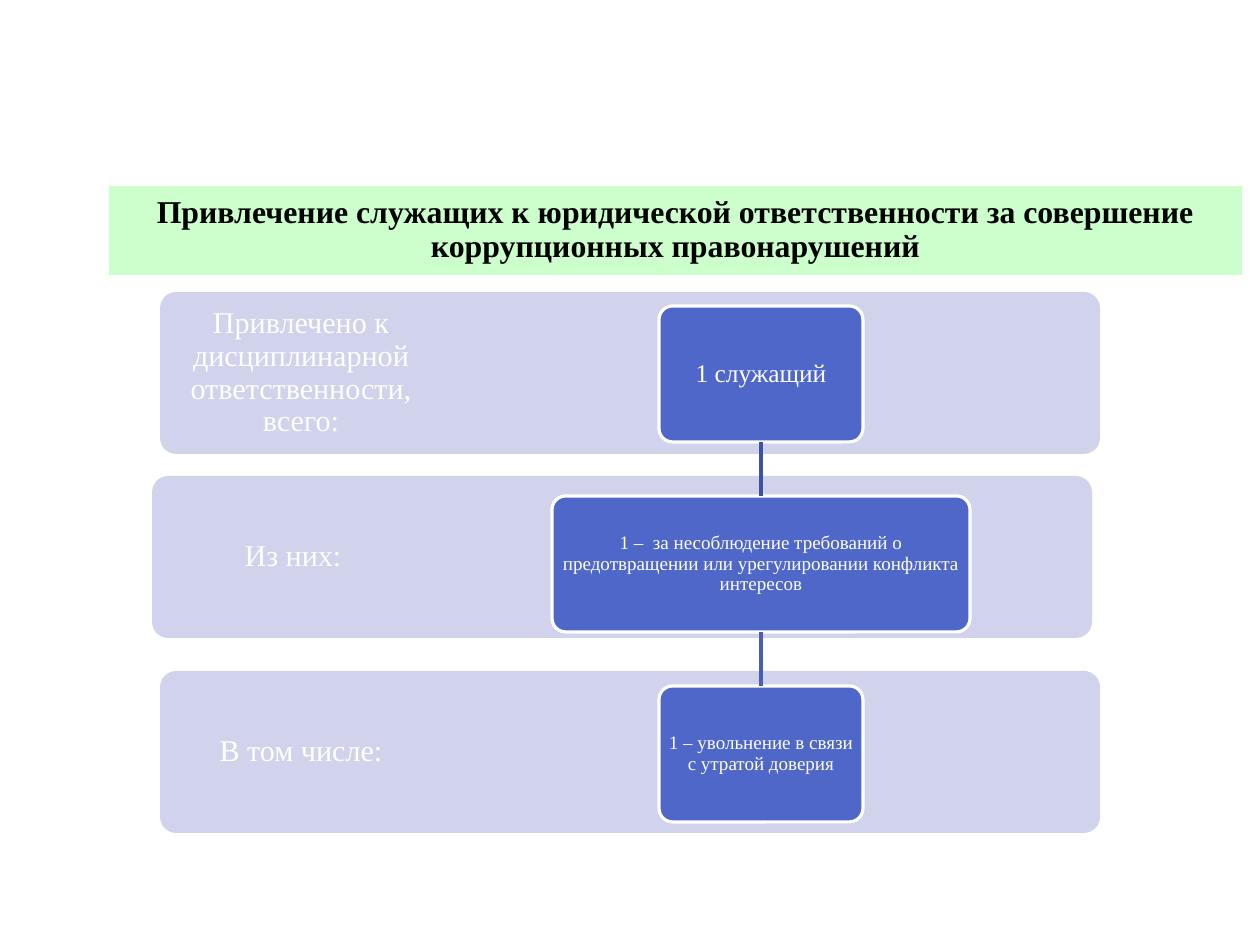
from dataclasses import dataclass

from lxml.etree import SubElement
from pptx import Presentation
from pptx.dml.color import RGBColor as Rgb
from pptx.enum.shapes import MSO_CONNECTOR as Link, MSO_SHAPE as Kind
from pptx.enum.text import MSO_ANCHOR as Anchor, MSO_AUTO_SIZE as Fit, PP_ALIGN as Align
from pptx.oxml.ns import qn
from pptx.shapes.autoshape import Shape
from pptx.slide import Slide
from pptx.util import Emu, Pt

PX = 8000
FONT = "Times New Roman"
WHITE = "FFFFFF"
BAND = "D0D3EB"
BLUE = "4E67C8"
MINT = "CCFFCC"
BLACK = "000000"

BAND_W, BAND_H = 940, 162
LABEL_W, LABEL_PAD = 282, 12
BOX_H, BOX_STEP, BOX_TOP = 136, 190, 306
MID = 761


@dataclass
class Row:
    label: str
    left: int
    top: int
    note: str
    width: int
    size: int
    inset: int


ROWS = [
    Row("Привлечено к дисциплинарной ответственности, всего:", 160, 292,
        "1 служащий", 204, 16, 8),
    Row("Из них:", 152, 476,
        "1 –  за несоблюдение требований о предотвращении или урегулировании "
        "конфликта интересов", 418, 12, 4),
    Row("В том числе:", 160, 671,
        "1 – увольнение в связи с утратой доверия", 204, 12, 4),
]
LINKS = ["3E52A0", "475DB6"]


def px(count: int) -> Emu:
    return Emu(count * PX)


def color(code: str) -> Rgb:
    return Rgb.from_string(code)


def paint(shape: Shape, code: str) -> None:
    shape.fill.solid()
    shape.fill.fore_color.rgb = color(code)


def write(shape: Shape, text: str, size: int, code: str, sides: tuple[int, int, int],
          bold: bool = False) -> None:
    left, right, edge = sides
    frame = shape.text_frame
    frame.auto_size = Fit.NONE
    frame.word_wrap = True
    frame.vertical_anchor = Anchor.MIDDLE
    frame.margin_left, frame.margin_right = px(left), px(right)
    frame.margin_top = frame.margin_bottom = px(edge)
    frame.text = text
    para = frame.paragraphs[0]
    para.alignment = Align.CENTER
    para.line_spacing = 0.9
    para.space_before = Pt(0)
    para.font.name = FONT
    para.font.size = Pt(size)
    para.font.bold = bold
    para.font.color.rgb = color(code)


def panel(slide: Slide, left: int, top: int, width: int, height: int, code: str) -> Shape:
    shape = slide.shapes.add_shape(
        Kind.ROUNDED_RECTANGLE, px(left), px(top), px(width), px(height))
    shape.adjustments[0] = 0.1
    shape.shadow.inherit = False
    paint(shape, code)
    shape.line.fill.background()
    return shape


def band(slide: Slide, row: Row) -> None:
    shape = panel(slide, row.left, row.top, BAND_W, BAND_H, BAND)
    right = BAND_W - LABEL_W + LABEL_PAD
    write(shape, row.label, 19, WHITE, (LABEL_PAD, right, LABEL_PAD))


def box(slide: Slide, row: Row, top: int) -> Shape:
    shape = panel(slide, MID - row.width // 2, top, row.width, BOX_H, BLUE)
    shape.line.color.rgb = color(WHITE)
    shape.line.width = Pt(2)
    write(shape, row.note, row.size, WHITE, (row.inset,) * 3)
    return shape


def join(slide: Slide, upper: Shape, lower: Shape, code: str) -> None:
    link = slide.shapes.add_connector(Link.STRAIGHT, 0, 0, 0, 0)
    link.begin_connect(upper, 2)
    link.end_connect(lower, 0)
    link.line.color.rgb = color(code)
    link.line.width = Pt(2)
    SubElement(link._element.spPr, qn("a:effectLst"))


def head(slide: Slide) -> None:
    title = slide.shapes.title
    title.left, title.top = px(109), px(186)
    title.width, title.height = px(1133), px(89)
    paint(title, MINT)
    write(title, "Привлечение служащих к юридической ответственности за совершение "
          "коррупционных правонарушений", 20, BLACK, (0, 0, 0), True)


def main() -> None:
    deck = Presentation()
    deck.slide_width, deck.slide_height = px(1260), px(945)
    slide = deck.slides.add_slide(deck.slide_layouts[5])
    head(slide)
    for row in ROWS:
        band(slide, row)
    boxes = [box(slide, row, BOX_TOP + i * BOX_STEP) for i, row in enumerate(ROWS)]
    for upper, lower, code in zip(boxes, boxes[1:], LINKS):
        join(slide, upper, lower, code)
    deck.save("out.pptx")


if __name__ == "__main__":
    main()
